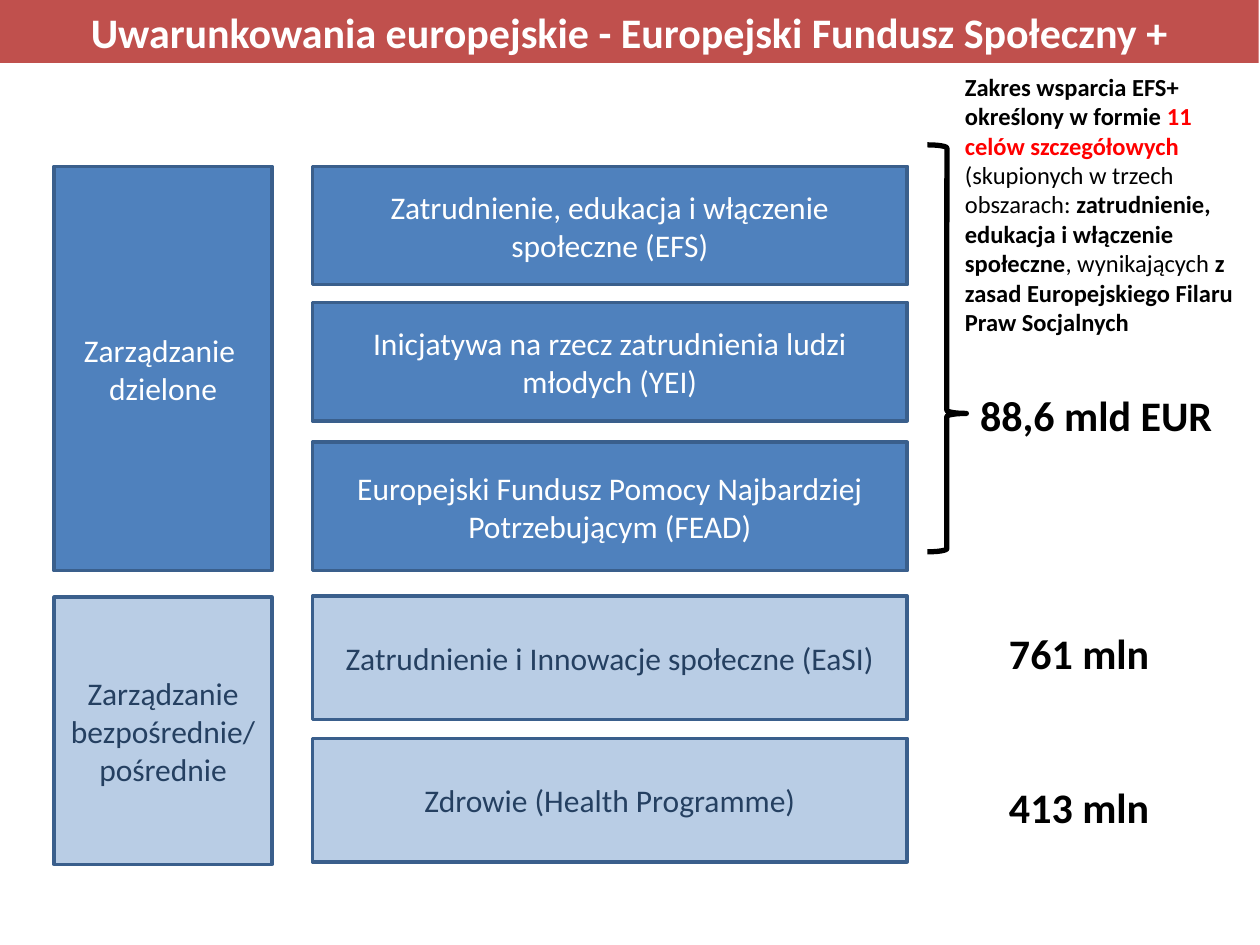
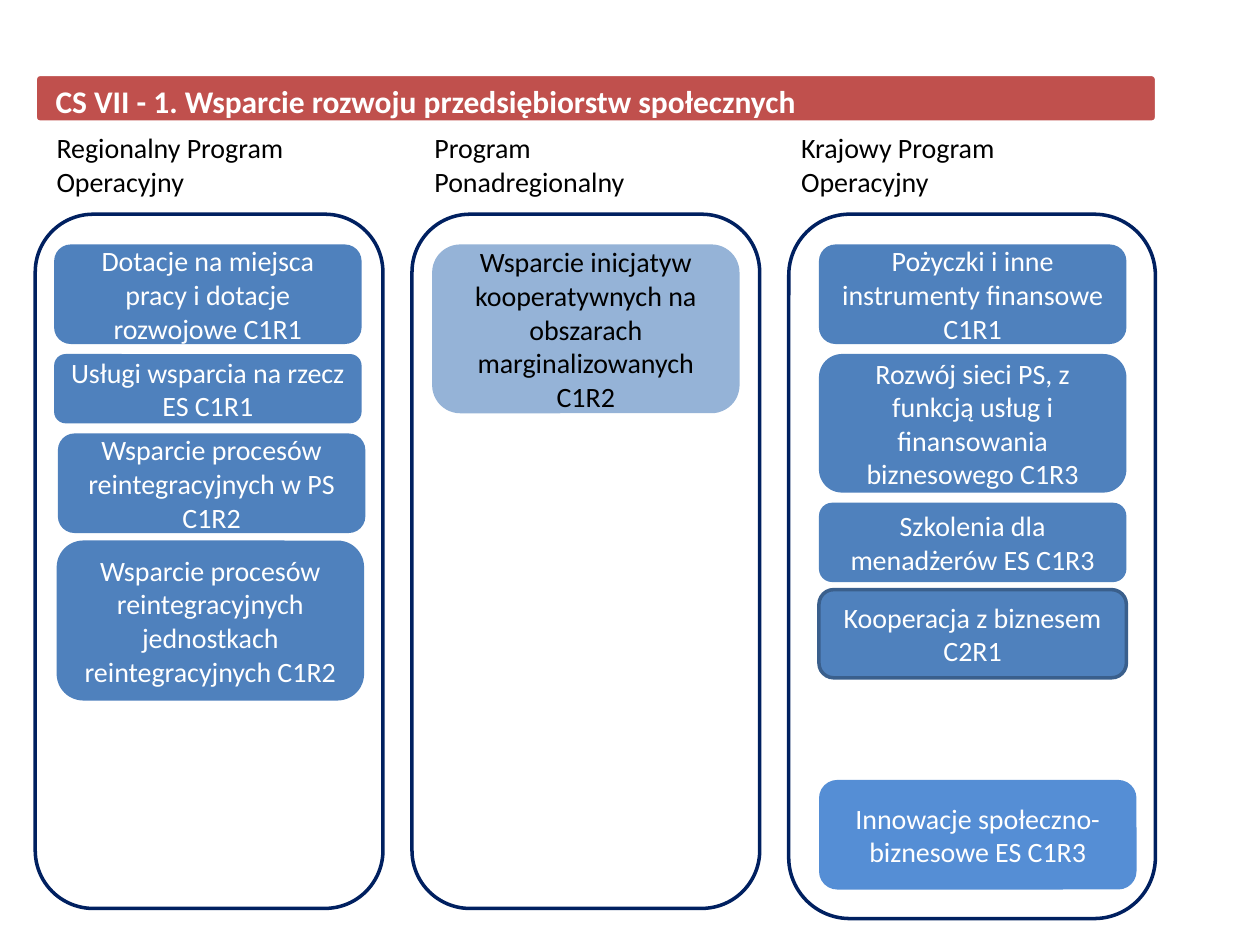
from dataclasses import dataclass
from typing import NamedTuple

from lxml import etree
from pptx import Presentation
from pptx.dml.color import RGBColor
from pptx.enum.shapes import MSO_SHAPE
from pptx.enum.text import MSO_ANCHOR, PP_ALIGN
from pptx.util import Inches, Pt

RECT = MSO_SHAPE.RECTANGLE
ROUND = MSO_SHAPE.ROUNDED_RECTANGLE
BRACE = MSO_SHAPE.RIGHT_BRACE
TOP, MIDDLE = MSO_ANCHOR.TOP, MSO_ANCHOR.MIDDLE
LEFT, CENTER = PP_ALIGN.LEFT, PP_ALIGN.CENTER
FONT = "Calibri"

COLORS = {
    "white": "FFFFFF",
    "black": "000000",
    "red": "FF0000",
    "brick": "C0504D",
    "blue": "4F81BD",
    "edge": "3A5F8C",
    "pale": "B9CDE5",
    "ink": "254061",
    "navy": "002060",
    "sky": "558ED5",
    "mist": "95B3D7",
}


class Look(NamedTuple):
    fill: str | None
    line: str | None
    ink: str
    weight: float = 2


class Area(NamedTuple):
    left: float
    top: float
    width: float
    height: float


@dataclass
class Card:
    top: float
    height: float
    text: str
    look: Look
    left: float
    width: float = 2.44


@dataclass
class Column:
    frame: Area
    head: Area
    title: str
    cards: list[Card]


SHARED = Look("blue", "edge", "white")
DIRECT = Look("pale", "edge", "ink")
BAND = Look("brick", None, "white")
RIBBON = Look("brick", "white", "white")
PLAIN = Look("blue", None, "white")
SOFT = Look("mist", None, "black")
FRESH = Look("sky", None, "white")
FRAME = Look(None, "navy", "black")
CURLY = Look("white", "black", "black", 3)

GROUPS = [
    Card(1.32, 3.21, "Zarządzanie \ndzielone", SHARED, 0.43, 1.73),
    Card(4.74, 2.12, "Zarządzanie bezpośrednie/\npośrednie", DIRECT, 0.43, 1.73),
]
FUNDS = [
    Card(1.32, 0.94, "Zatrudnienie, edukacja i włączenie społeczne (EFS)", SHARED, 2.48, 4.72),
    Card(2.4, 0.94, "Inicjatywa na rzecz zatrudnienia ludzi młodych (YEI)", SHARED, 2.48, 4.72),
    Card(3.51, 1.02, "Europejski Fundusz Pomocy Najbardziej Potrzebującym (FEAD)", SHARED, 2.48, 4.72),
    Card(4.73, 0.98, "Zatrudnienie i Innowacje społeczne (EaSI)", DIRECT, 2.48, 4.72),
    Card(5.86, 0.98, "Zdrowie (Health Programme)", DIRECT, 2.48, 4.72),
]
SUMS = [
    (Area(7.68, 3.04, 2.14, 0.5), "88,6 mld EUR"),
    (Area(7.91, 4.93, 1.4, 0.5), "761 mln"),
    (Area(7.91, 6.15, 1.4, 0.5), "413 mln"),
]
SCOPE = [
    ("Zakres wsparcia EFS+ określony w formie ", "black", True),
    ("11 celów szczegółowych ", "red", True),
    ("(skupionych w trzech obszarach: ", "black", False),
    ("zatrudnienie, edukacja i włączenie społeczne", "black", True),
    (", wynikających ", "black", False),
    ("z zasad Europejskiego Filaru Praw Socjalnych", "black", True),
]
COLUMNS = [
    Column(Area(0.28, 1.7, 2.76, 5.51), Area(0.35, 0.99, 2.28, 0.64), "Regionalny Program Operacyjny", [
        Card(1.94, 0.79, "Dotacje na miejsca pracy i dotacje rozwojowe C1R1", PLAIN, 0.43),
        Card(2.81, 0.55, "Usługi wsparcia na rzecz ES C1R1", PLAIN, 0.43),
        Card(3.44, 0.79, "Wsparcie procesów reintegracyjnych w PS C1R2", PLAIN, 0.46),
        Card(4.29, 1.27, "Wsparcie procesów reintegracyjnych jednostkach reintegracyjnych C1R2", PLAIN, 0.45),
    ]),
    Column(Area(3.27, 1.7, 2.76, 5.51), Area(3.35, 0.99, 2.44, 0.64), "Program Ponadregionalny", [
        Card(1.94, 1.34, "Wsparcie inicjatyw kooperatywnych na obszarach marginalizowanych C1R2", SOFT, 3.43),
    ]),
    Column(Area(6.26, 1.7, 2.91, 5.59), Area(6.26, 0.99, 2.52, 0.64), "Krajowy Program Operacyjny", [
        Card(1.94, 0.79, "Pożyczki i inne instrumenty finansowe C1R1", PLAIN, 6.5),
        Card(2.81, 1.1, "Rozwój sieci PS, z funkcją usług i finansowania biznesowego C1R3", PLAIN, 6.5),
        Card(3.99, 0.63, "Szkolenia dla menadżerów ES C1R3", PLAIN, 6.5),
        Card(4.68, 0.7, "Kooperacja z biznesem C2R1", SHARED, 6.5),
        Card(6.19, 0.87, "Innowacje społeczno- biznesowe ES C1R3", FRESH, 6.5, 2.52),
    ]),
]


def color(name: str) -> RGBColor:
    return RGBColor.from_string(COLORS[name])


def place(area: Area) -> list[int]:
    return [Inches(n) for n in area]


def write(frame, text: str, size: int, ink: str, bold: bool = False, align=LEFT) -> None:
    frame.text = text
    for para in frame.paragraphs:
        para.alignment = align
        font = para.font
        font.name, font.size, font.bold = FONT, Pt(size), bold
        font.color.rgb = color(ink)


def draw(slide, kind, area: Area, look: Look):
    shape = slide.shapes.add_shape(kind, *place(area))
    shape.shadow.inherit = False
    if look.fill:
        shape.fill.solid()
        shape.fill.fore_color.rgb = color(look.fill)
    else:
        shape.fill.background()
    if look.line:
        shape.line.color.rgb = color(look.line)
        shape.line.width = Pt(look.weight)
    else:
        shape.line.fill.background()
    return shape


def deal(slide, kind, cards: list[Card], size: int) -> None:
    for card in cards:
        area = Area(card.left, card.top, card.width, card.height)
        frame = draw(slide, kind, area, card.look).text_frame
        frame.word_wrap = True
        frame.vertical_anchor = MIDDLE
        write(frame, card.text, size, card.look.ink, align=CENTER)


def head(slide, kind, area: Area, look: Look, text: str, size: int, align):
    shape = draw(slide, kind, area, look)
    frame = shape.text_frame
    frame.word_wrap = True
    frame.vertical_anchor = TOP
    write(frame, text, size, look.ink, True, align)
    return shape


def label(slide, area: Area, text: str, size: int, bold: bool = False, wrap: bool = True):
    frame = slide.shapes.add_textbox(*place(area)).text_frame
    frame.word_wrap = wrap
    write(frame, text, size, "black", bold)
    return frame


def funding(slide) -> None:
    deal(slide, RECT, FUNDS + GROUPS, 18)
    head(slide, RECT, Area(0, 0, 9.99, 0.5), BAND,
         "Uwarunkowania europejskie - Europejski Fundusz Społeczny +", 24, CENTER)
    brace = draw(slide, BRACE, Area(7.36, 1.15, 0.31, 3.23), CURLY)
    brace.adjustments[0] = 0.08
    brace.adjustments[1] = 0.66
    for area, text in SUMS:
        label(slide, area, text, 24, True, False)
    para = label(slide, Area(7.56, 0.52, 2.44, 2.22), "", 14).paragraphs[0]
    for text, ink, bold in SCOPE:
        run = para.add_run()
        run.text = text
        run.font.bold = bold
        run.font.color.rgb = color(ink)


def support(slide) -> None:
    ribbon = head(slide, ROUND, Area(0.28, 0.59, 8.9, 0.38), RIBBON,
                  "CS VII - 1. Wsparcie rozwoju przedsiębiorstw społecznych", 18, LEFT)
    ribbon.adjustments[0] = 0.1
    ribbon.text_frame.margin_left = Inches(0.15)
    for column in COLUMNS:
        draw(slide, ROUND, column.frame, FRAME)
        label(slide, column.head, column.title, 16)
        deal(slide, ROUND, column.cards, 16)


def main() -> None:
    deck = Presentation()
    deck.slide_width, deck.slide_height = Inches(10), Inches(7.5)
    blank = deck.slide_layouts[6]
    for build in (funding, support):
        build(deck.slides.add_slide(blank))
    deck.save("out.pptx")


if __name__ == "__main__":
    main()
